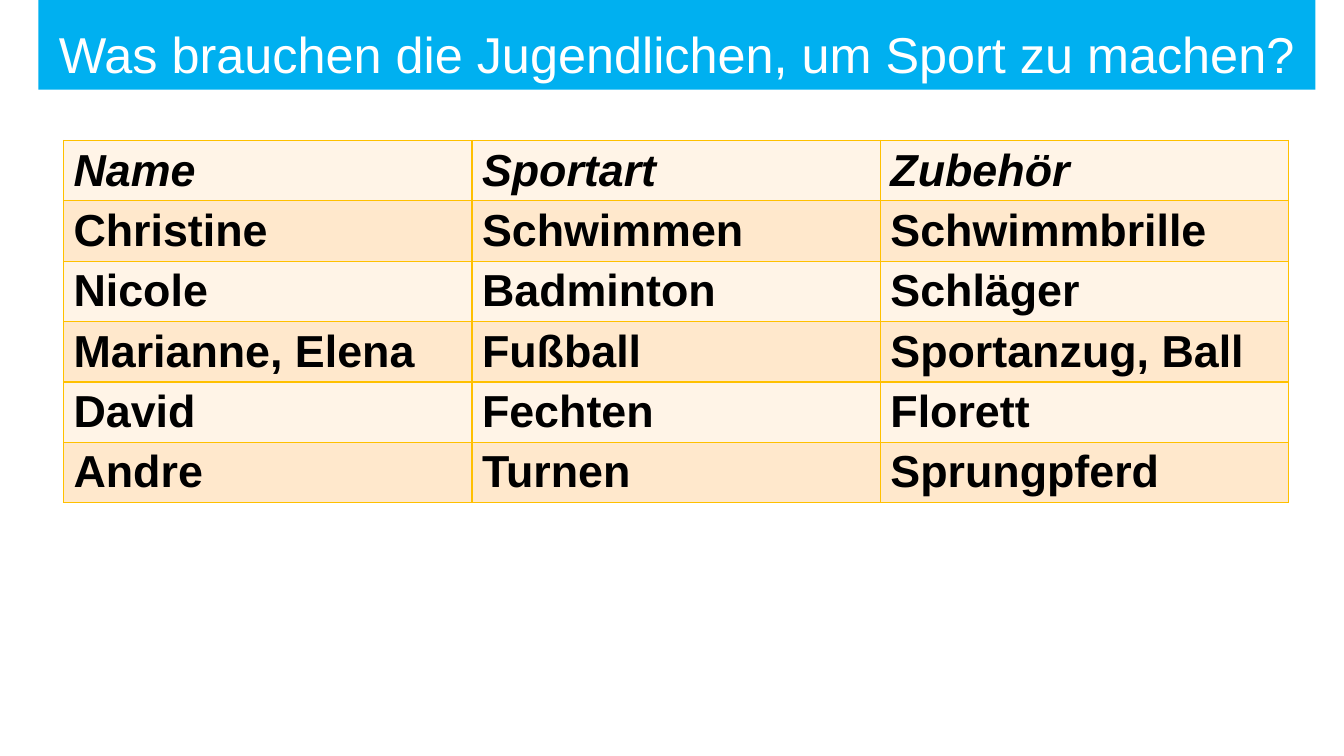
import pptx
import pptx.util
import pptx.dml.color
import pptx.enum.shapes
import pptx.enum.text
import lxml.etree
from pptx.util import Cm

NS = "http://schemas.openxmlformats.org/drawingml/2006/main"


def color(code):
    return pptx.dml.color.RGBColor.from_string(code)


def border(cell, code, width):
    props = cell._tc.get_or_add_tcPr()
    # Border lines must stand before the fill
    for spot, side in enumerate(("lnL", "lnR", "lnT", "lnB")):
        line = lxml.etree.Element(f"{{{NS}}}{side}", w=str(pptx.util.Pt(width)))
        fill = lxml.etree.SubElement(line, f"{{{NS}}}solidFill")
        lxml.etree.SubElement(fill, f"{{{NS}}}srgbClr", val=code)
        props.insert(spot, line)


deck = pptx.Presentation()
deck.slide_width, deck.slide_height = Cm(33.87), Cm(19.05)
slide = deck.slides.add_slide(deck.slide_layouts[6])

# Title bar
bar = slide.shapes.add_shape(
    pptx.enum.shapes.MSO_SHAPE.RECTANGLE, Cm(0.97), 0, Cm(32.18), Cm(2.26))
bar.shadow.inherit = False
bar.fill.solid()
bar.fill.fore_color.rgb = color("00B0F0")
bar.line.fill.background()
frame = bar.text_frame
frame.word_wrap = True
frame.vertical_anchor = pptx.enum.text.MSO_ANCHOR.BOTTOM
title = frame.paragraphs[0]
title.text = "Was brauchen die Jugendlichen, um Sport zu machen?"
title.alignment = pptx.enum.text.PP_ALIGN.CENTER
title.line_spacing = 0.9
title.font.name = "Arial"
title.font.size = pptx.util.Pt(36)
title.font.color.rgb = color("FFFFFF")

# Table of sports and gear
rows = [
    ("Name", "Sportart", "Zubehör"),
    ("Christine", "Schwimmen", "Schwimmbrille"),
    ("Nicole", "Badminton", "Schläger"),
    ("Marianne, Elena", "Fußball", "Sportanzug, Ball"),
    ("David", "Fechten", "Florett"),
    ("Andre", "Turnen", "Sprungpferd"),
]
bands = ("FFF4E7", "FFE8CC")
high = Cm(1.52)
table = slide.shapes.add_table(
    len(rows), 3, Cm(1.6), Cm(3.54), Cm(30.88), high * len(rows)).table

for r, row in enumerate(rows):
    table.rows[r].height = high
    for c, word in enumerate(row):
        cell = table.cell(r, c)
        cell.fill.solid()
        cell.fill.fore_color.rgb = color(bands[r % 2])
        border(cell, "FFC000", 1)
        para = cell.text_frame.paragraphs[0]
        para.text = word
        para.font.name = "Arial"
        para.font.size = pptx.util.Pt(32)
        para.font.bold = True
        para.font.italic = r == 0
        para.font.color.rgb = color("000000")

deck.save("out.pptx")
